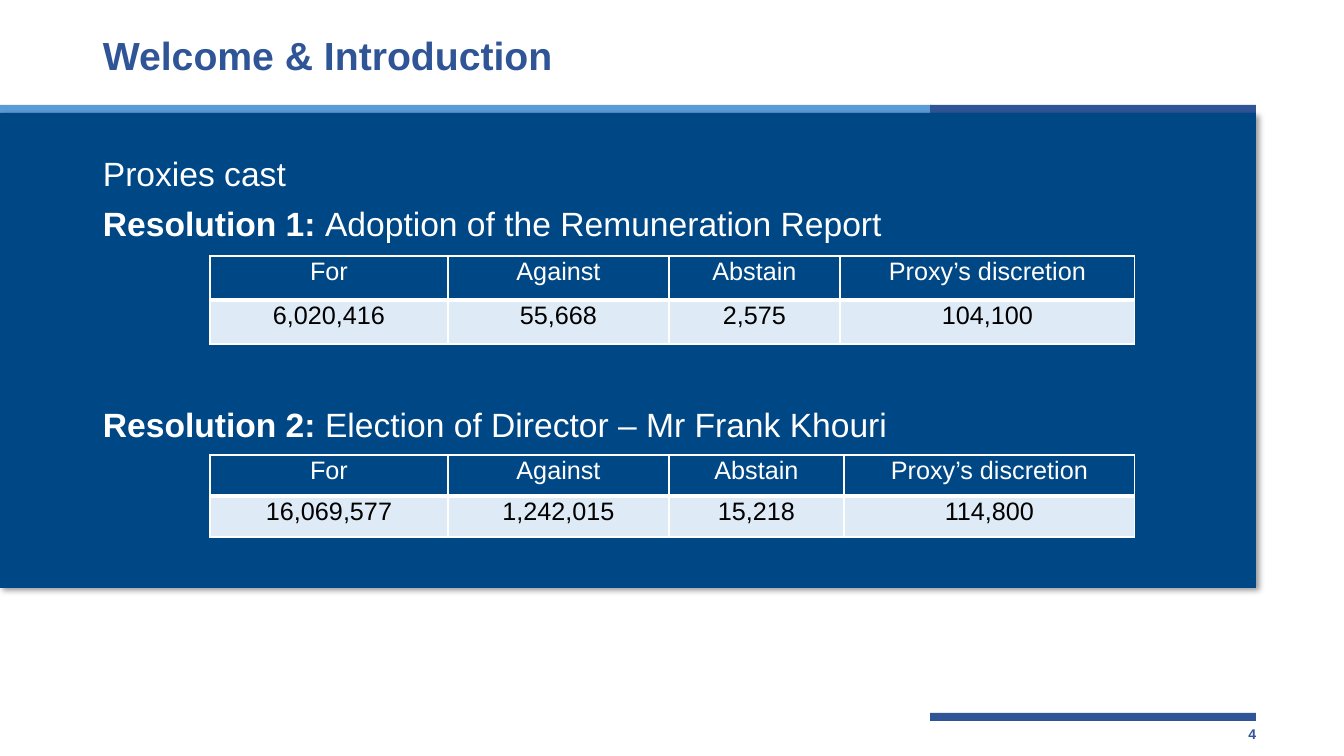
"""Build the proxy vote slide with its two resolution tables."""
from lxml.etree import SubElement
from pptx import Presentation
from pptx.dml.color import RGBColor
from pptx.enum.shapes import MSO_SHAPE
from pptx.enum.text import PP_ALIGN
from pptx.oxml.ns import qn
from pptx.util import Emu, Pt

WHITE = RGBColor(0xFF, 0xFF, 0xFF)
BLACK = RGBColor(0, 0, 0)
SKY = RGBColor(0x5B, 0x9B, 0xD5)
ROYAL = RGBColor(0x2F, 0x55, 0x97)
NAVY = RGBColor(0x00, 0x47, 0x85)
PALE = RGBColor(0xDE, 0xEB, 0xF7)

TITLE = "Welcome & Introduction"
PAGE_NUMBER = "4"
BODY = [
    (0, [("Proxies cast", False)]),
    (10, [("Resolution 1: ", True), ("Adoption of the Remuneration Report", False)]),
    (118, [("Resolution 2: ", True), ("Election of Director – Mr Frank Khouri", False)]),
]
HEADINGS = ["For", "Against", "Abstain", "Proxy’s discretion"]
TABLE_LEFT = 210
TABLES = [
    (256, 44, [238, 221, 171, 295], ["6,020,416", "55,668", "2,575", "104,100"]),
    (455, 41, [238, 221, 175, 291], ["16,069,577", "1,242,015", "15,218", "114,800"]),
]
BARS = [
    (0, 105, 932, 8, SKY),
    (930, 105, 326, 8, ROYAL),
    (930, 713, 326, 8, ROYAL),
]
PANEL = (0, 113, 1256, 475, NAVY)


def px(length):
    return Emu(round(length * 914400 / 100.8))


def add_bar(page, left, top, width, height, color):
    bar = page.shapes.add_shape(MSO_SHAPE.RECTANGLE, px(left), px(top), px(width), px(height))
    bar.shadow.inherit = False
    bar.fill.solid()
    bar.fill.fore_color.rgb = color
    bar.line.fill.background()
    return bar


def cast_shadow(shape):
    effects = shape._element.spPr.find(qn("a:effectLst"))
    shadow = SubElement(effects, qn("a:outerShdw"), blurRad=str(Pt(4)), dist=str(Pt(3)),
                        dir=str(45 * 60000), algn="tl", rotWithShape="0")
    color = SubElement(shadow, qn("a:srgbClr"), val=str(BLACK))
    SubElement(color, qn("a:alpha"), val="40000")


def add_span(para, text, size, color, bold=False):
    span = para.add_run()
    span.text = text
    span.font.name = "Arial"
    span.font.size = Pt(size)
    span.font.bold = bold
    span.font.color.rgb = color


def add_box(page, left, top, width, height):
    box = page.shapes.add_textbox(px(left), px(top), px(width), px(height))
    box.text_frame.word_wrap = True
    return box.text_frame


def add_borders(cell, widths):
    properties = cell._tc.get_or_add_tcPr()
    for position, (side, width) in enumerate(widths.items()):
        line = properties.makeelement(qn(f"a:{side}"), {"w": str(Pt(width))})
        fill = SubElement(line, qn("a:solidFill"))
        SubElement(fill, qn("a:srgbClr"), val=str(WHITE))
        properties.insert(position, line)


def fill_cell(cell, text, is_heading):
    cell.margin_left = cell.margin_right = px(7)
    cell.margin_top = cell.margin_bottom = 0
    cell.fill.solid()
    cell.fill.fore_color.rgb = NAVY if is_heading else PALE
    top, bottom = (1, 3) if is_heading else (3, 1)
    add_borders(cell, {"lnL": 1, "lnR": 1, "lnT": top, "lnB": bottom})
    para = cell.text_frame.paragraphs[0]
    para.alignment = PP_ALIGN.CENTER
    para.line_spacing = 1.07
    add_span(para, text, 18, WHITE if is_heading else BLACK)


def add_votes(page, top, row_height, widths, votes):
    frame = page.shapes.add_table(2, len(widths), px(TABLE_LEFT), px(top),
                                  px(sum(widths)), px(2 * row_height))
    table = frame.table
    table.first_row = table.horz_banding = False
    for column, width in zip(table.columns, widths):
        column.width = px(width)
    for index, texts in enumerate([HEADINGS, votes]):
        table.rows[index].height = px(row_height)
        for cell, text in zip(table.rows[index].cells, texts):
            fill_cell(cell, text, index == 0)


def main():
    deck = Presentation()
    deck.slide_width, deck.slide_height = px(1344), px(756)
    page = deck.slides.add_slide(deck.slide_layouts[6])

    for bar in BARS:
        add_bar(page, *bar)
    number = add_box(page, 973, 721, 293, 27).paragraphs[0]
    number.alignment = PP_ALIGN.RIGHT
    add_span(number, PAGE_NUMBER, 10, ROYAL, True)
    cast_shadow(add_bar(page, *PANEL))

    title = add_box(page, 93, 32, 799, 61).paragraphs[0]
    title.line_spacing = 0.9
    add_span(title, TITLE, 28, ROYAL, True)

    body = add_box(page, 93, 152, 1159, 480)
    for index, (gap, spans) in enumerate(BODY):
        para = body.add_paragraph() if index else body.paragraphs[0]
        para.line_spacing = 0.9
        para.space_before = Pt(gap)
        for text, bold in spans:
            add_span(para, text, 24, WHITE, bold)

    for table in TABLES:
        add_votes(page, *table)
    deck.save("out.pptx")


if __name__ == "__main__":
    main()
